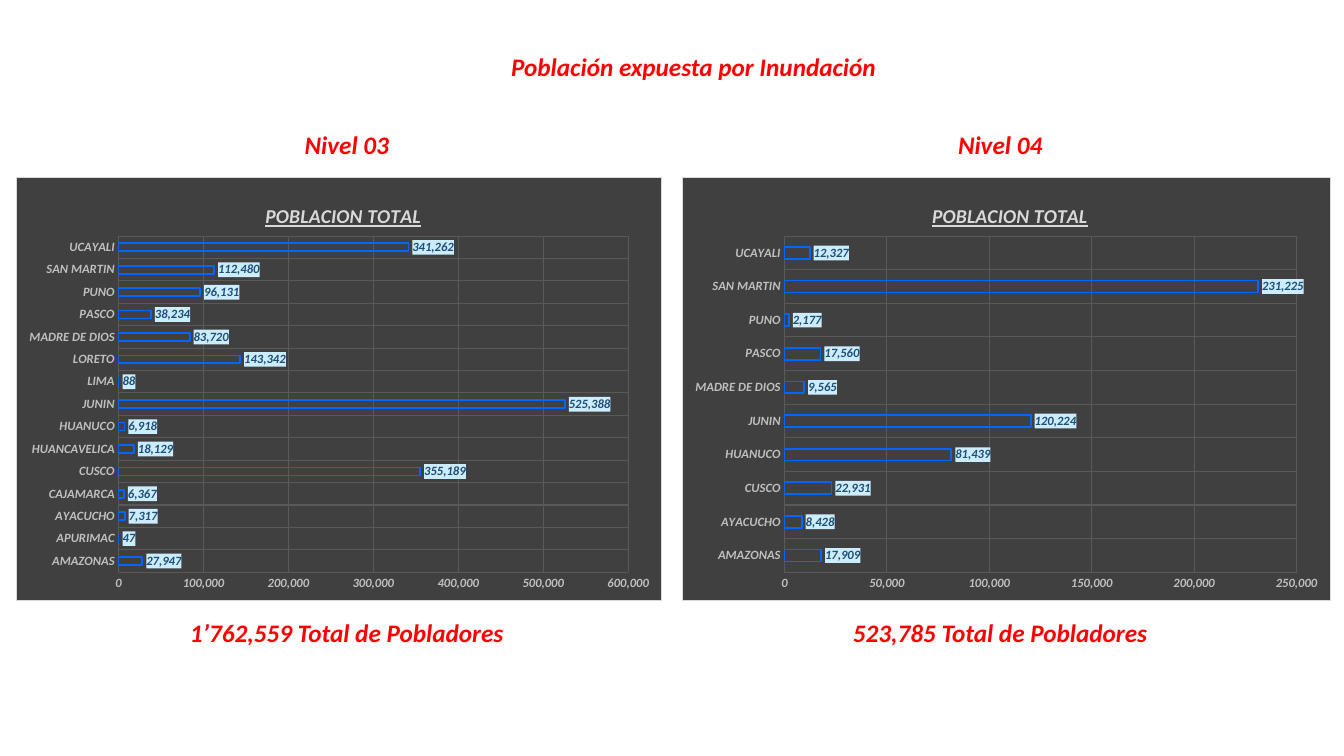
from pptx import Presentation
from pptx.chart.data import CategoryChartData
from pptx.dml.color import RGBColor
from pptx.enum.chart import XL_CHART_TYPE, XL_LABEL_POSITION, XL_TICK_MARK
from pptx.enum.text import MSO_ANCHOR, PP_ALIGN
from pptx.oxml import parse_xml
from pptx.oxml.ns import nsdecls
from pptx.util import Pt

BAR = XL_CHART_TYPE.BAR_CLUSTERED
OUTSIDE = XL_LABEL_POSITION.OUTSIDE_END
NO_TICK = XL_TICK_MARK.NONE
CENTER = PP_ALIGN.CENTER
TOP = MSO_ANCHOR.TOP

PX = 9144  # 100 px to the inch
RED = RGBColor(0xFF, 0x00, 0x00)
BLUE = RGBColor(0x00, 0x66, 0xFF)
NAVY = RGBColor(0x1F, 0x4E, 0x79)
ICE = RGBColor(0xCC, 0xEC, 0xFF)
DARK = RGBColor(0x40, 0x40, 0x40)
GRID = RGBColor(0x59, 0x59, 0x59)
GRAY = RGBColor(0xBF, 0xBF, 0xBF)
PALE = RGBColor(0xD9, 0xD9, 0xD9)

PANELS = [
    ("Nivel 03", (290, 108), "1’762,559 Total de Pobladores", (176, 336), (16, 641), {
        "AMAZONAS": 27947, "APURIMAC": 47, "AYACUCHO": 7317,
        "CAJAMARCA": 6367, "CUSCO": 355189, "HUANCAVELICA": 18129,
        "HUANUCO": 6918, "JUNIN": 525388, "LIMA": 88, "LORETO": 143342,
        "MADRE DE DIOS": 83720, "PASCO": 38234, "PUNO": 96131,
        "SAN MARTIN": 112480, "UCAYALI": 341262}, 600000, 100000),
    ("Nivel 04", (938, 108), "523,785 Total de Pobladores", (833, 318), (676, 644), {
        "AMAZONAS": 17909, "AYACUCHO": 8428, "CUSCO": 22931,
        "HUANUCO": 81439, "JUNIN": 120224, "MADRE DE DIOS": 9565,
        "PASCO": 17560, "PUNO": 2177, "SAN MARTIN": 231225,
        "UCAYALI": 12327}, 250000, 50000),
]


def style(font, size, color):
    font.name = "Calibri"
    font.size = Pt(size)
    font.bold = font.italic = True
    font.color.rgb = color


def label(box, text, left, top, wide):
    box.left, box.top, box.width, box.height = [n * PX for n in (left, top, wide, 40)]
    frame = box.text_frame
    frame.text = text
    frame.word_wrap = False
    frame.vertical_anchor = TOP
    para = frame.paragraphs[0]
    para.alignment = CENTER
    style(para.font, 18, RED)


prs = Presentation()
prs.slide_width, prs.slide_height = 1333 * PX, 750 * PX
slide = prs.slides.add_slide(prs.slide_layouts[5])
shapes = slide.shapes
label(shapes.title, "Población expuesta por Inundación", 495, 46, 386)

for level, (head_x, head_w), total, (sum_x, sum_w), (left, wide), people, top, step in PANELS:
    label(shapes.add_textbox(0, 0, 0, 0), level, head_x, 123, head_w)
    label(shapes.add_textbox(0, 0, 0, 0), total, sum_x, 608, sum_w)

    data = CategoryChartData(number_format="#,##0")
    data.categories = list(people)
    data.add_series("POBLACION TOTAL", list(people.values()))
    chart = shapes.add_chart(BAR, left * PX, 176 * PX, wide * PX, 420 * PX, data).chart
    chart.has_legend = False
    chart.font.name = "Calibri"
    chart.font.size = Pt(10)

    chart.has_title = True
    frame = chart.chart_title.text_frame
    frame.text = "POBLACION TOTAL"
    font = frame.paragraphs[0].font
    style(font, 14, PALE)
    font.underline = True

    for axis in (chart.category_axis, chart.value_axis):
        axis.major_tick_mark = axis.minor_tick_mark = NO_TICK
        axis.has_major_gridlines = True
        line = axis.major_gridlines.format.line
        line.width = Pt(0.75)
        line.color.rgb = GRID
        axis.format.line.fill.background()
        style(axis.tick_labels.font, 9, GRAY)
    axis.minimum_scale, axis.maximum_scale, axis.major_unit = 0, top, step
    axis.tick_labels.number_format = "#,##0"
    axis.tick_labels.number_format_is_linked = False

    plot = chart.plots[0]
    plot.gap_width, plot.overlap = 182, -50
    plot.vary_by_categories = False
    bars = plot.series[0]
    bars.format.fill.background()
    bars.format.line.width = Pt(1.25)
    bars.format.line.color.rgb = BLUE
    tags = bars.data_labels
    tags.show_value = True
    tags.position = OUTSIDE
    tags.number_format = "#,##0"
    tags.number_format_is_linked = False
    style(tags.font, 9, NAVY)

    root = chart.element
    for text, fill, edge in (
            (root.xpath("c:txPr")[0], DARK, f'<a:ln w="9525"><a:solidFill><a:srgbClr val="{PALE}"/></a:solidFill></a:ln>'),
            (root.xpath(".//c:ser/c:dLbls/c:txPr")[0], ICE, "<a:ln><a:noFill/></a:ln>")):
        text.addprevious(parse_xml(
            f'<c:spPr {nsdecls("c", "a")}><a:solidFill><a:srgbClr val="{fill}"/>'
            f'</a:solidFill>{edge}</c:spPr>'))

    area = root.xpath("c:chart/c:plotArea")[0]
    title = root.xpath("c:chart/c:title")[0]
    for host, spot, target, sizes in (
            (area, 0, '<c:layoutTarget val="inner"/>', (("x", 0.158), ("y", 0.138), ("w", 0.79), ("h", 0.796))),
            (title, 1, "", (("x", 0.38), ("y", 0.05)))):
        for old in host.xpath("c:layout"):
            host.remove(old)
        modes = "".join(f'<c:{k}Mode val="edge"/>' for k, _ in sizes[:2])
        marks = "".join(f'<c:{k} val="{v}"/>' for k, v in sizes)
        host.insert(spot, parse_xml(
            f'<c:layout {nsdecls("c")}><c:manualLayout>{target}{modes}{marks}'
            '</c:manualLayout></c:layout>'))

prs.save("out.pptx")
